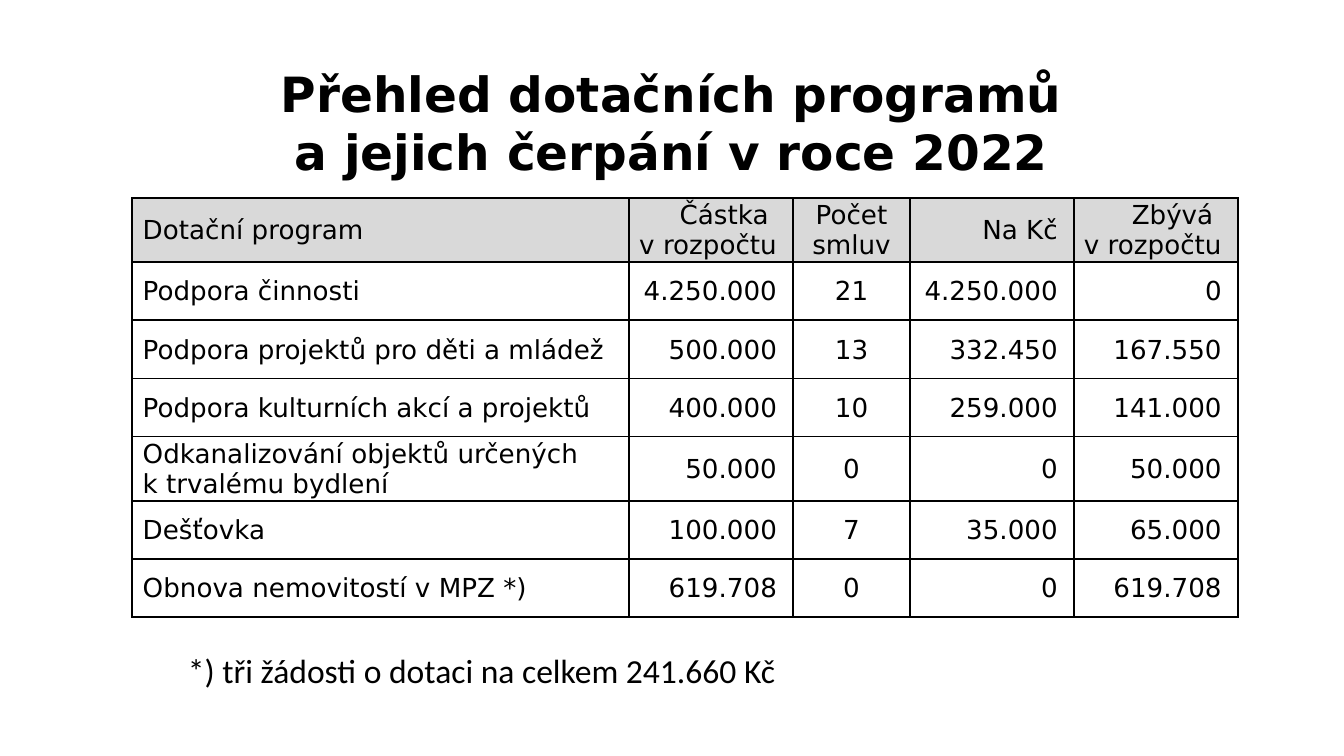
from lxml import etree
from pptx import Presentation
from pptx.dml import color
from pptx.enum import text
from pptx.oxml import ns
from pptx.util import Pt

LEFT, CENTER, RIGHT = text.PP_ALIGN.LEFT, text.PP_ALIGN.CENTER, text.PP_ALIGN.RIGHT

# Width, alignment, left and right inset of each table column
LABEL = (266.4, LEFT, 5.76, 0.72)
AMOUNT = (87.8, RIGHT, 0.72, 8.64)
COUNT = (62.7, CENTER, 0.72, 0.72)
COLUMNS = [LABEL, AMOUNT, COUNT, AMOUNT, AMOUNT]

PROGRAMS = [
    ["Dotační program", "Částka \nv rozpočtu", "Počet smluv", "Na Kč", "Zbývá \nv rozpočtu"],
    ["Podpora činnosti", "4.250.000", "21", "4.250.000", "0"],
    ["Podpora projektů pro děti a mládež", "500.000", "13", "332.450", "167.550"],
    ["Podpora kulturních akcí a projektů", "400.000", "10", "259.000", "141.000"],
    ["Odkanalizování objektů určených\nk trvalému bydlení", "50.000", "0", "0", "50.000"],
    ["Dešťovka", "100.000", "7", "35.000", "65.000"],
    ["Obnova nemovitostí v MPZ *)", "619.708", "0", "0", "619.708"],
]


def rgb(value):
    return color.RGBColor.from_string(value)


def write(frame, content, *, font, size, ink, bold=False, align=LEFT):
    """Fill a text frame; each newline starts a paragraph, each \\v a line."""
    frame.text = content
    for paragraph in frame.paragraphs:
        paragraph.alignment = align
        for run in paragraph.runs:
            run.font.name = font
            run.font.size = Pt(size)
            run.font.bold = bold
            run.font.color.rgb = rgb(ink)


def outline(cell, ink, width):
    """Draw a line along all four edges of a table cell."""
    properties = cell._tc.get_or_add_tcPr()
    for position, edge in enumerate(("lnL", "lnR", "lnT", "lnB")):
        line = etree.Element(ns.qn(f"a:{edge}"), w=str(Pt(width)))
        fill = etree.SubElement(line, ns.qn("a:solidFill"))
        etree.SubElement(fill, ns.qn("a:srgbClr"), val=ink)
        properties.insert(position, line)


class BudgetSlide:
    ink = "000000"
    header_fill = "D9D9D9"
    body_fill = "FFFFFF"
    heading_font = "DejaVu Sans"
    note_font = "Calibri"

    def __init__(self, deck):
        self.slide = deck.slides.add_slide(deck.slide_layouts[6])

    def box(self, left, top, width, height):
        return self.slide.shapes.add_textbox(Pt(left), Pt(top), Pt(width), Pt(height)).text_frame

    def title(self, content, *place):
        frame = self.box(*place)
        frame.word_wrap = True
        frame.vertical_anchor = text.MSO_ANCHOR.MIDDLE
        write(frame, content, font=self.heading_font, size=26, ink=self.ink,
              bold=True, align=CENTER)

    def note(self, content, *place):
        frame = self.box(*place)
        frame.word_wrap = False
        frame.auto_size = text.MSO_AUTO_SIZE.SHAPE_TO_FIT_TEXT
        write(frame, content, font=self.note_font, size=18, ink=self.ink)

    def table(self, rows, columns, left, top, header_height, row_height):
        width = sum(column[0] for column in columns)
        height = header_height + row_height * (len(rows) - 1)
        grid = self.slide.shapes.add_table(
            len(rows), len(columns), Pt(left), Pt(top), Pt(width), Pt(height)).table
        for index, column in enumerate(columns):
            grid.columns[index].width = Pt(column[0])
        for r, row in enumerate(rows):
            grid.rows[r].height = Pt(row_height if r else header_height)
            for c, content in enumerate(row):
                self.cell(grid.cell(r, c), content, columns[c],
                          self.body_fill if r else self.header_fill)

    def cell(self, cell, content, column, fill):
        _, align, inset_left, inset_right = column
        cell.margin_left, cell.margin_right = Pt(inset_left), Pt(inset_right)
        cell.margin_top, cell.margin_bottom = Pt(0.72), Pt(0)
        cell.vertical_anchor = text.MSO_ANCHOR.MIDDLE
        cell.fill.solid()
        cell.fill.fore_color.rgb = rgb(fill)
        outline(cell, self.ink, 1)
        write(cell.text_frame, content, font=self.heading_font, size=14,
              ink=self.ink, align=align)


def main():
    deck = Presentation()
    deck.slide_width, deck.slide_height = Pt(720), Pt(405)
    page = BudgetSlide(deck)
    page.title("Přehled dotačních programů\va jejich čerpání v roce 2022", 36, 35.5, 648, 60)
    page.table(PROGRAMS, COLUMNS, left=70.7, top=106, header_height=34.4, row_height=31.2)
    page.note("*) tři žádosti o dotaci na celkem 241.660 Kč", 93.6, 344.5, 342.7, 29)
    deck.save("out.pptx")


if __name__ == "__main__":
    main()
